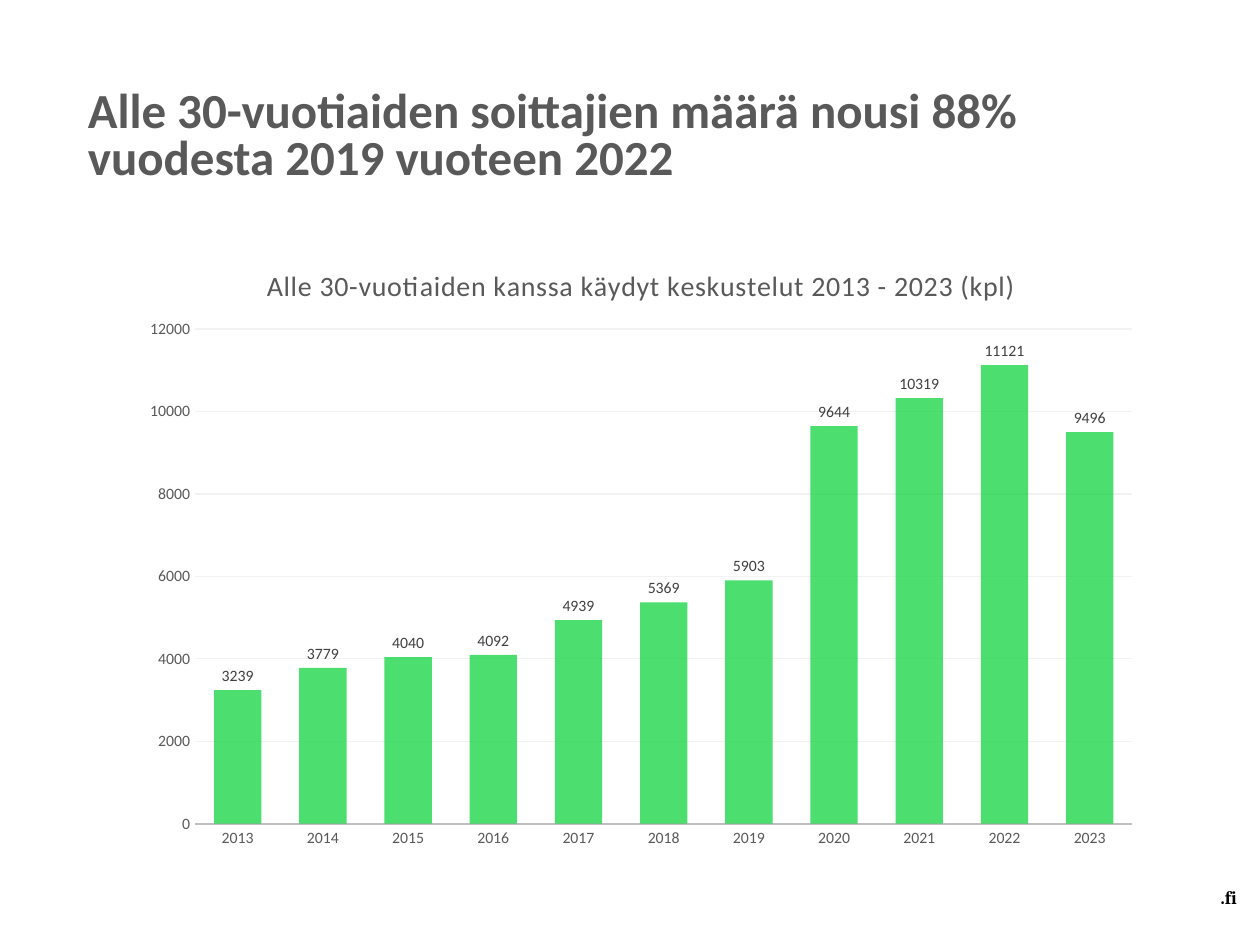
import pptx
import pptx.chart.data
import pptx.dml.color
import pptx.enum.chart
import pptx.enum.text
import pptx.oxml
import pptx.oxml.ns
import pptx.util
from pptx.util import Inches

RGBColor = pptx.dml.color.RGBColor
BLACK = RGBColor(0x00, 0x00, 0x00)
DARK_GREY = RGBColor(0x40, 0x40, 0x40)
GREY = RGBColor(0x59, 0x59, 0x59)
AXIS_GREY = RGBColor(0xBF, 0xBF, 0xBF)
GRID_GREY = RGBColor(0xF2, 0xF2, 0xF2)
GREEN = RGBColor(0x00, 0xD0, 0x32)

CONVERSATIONS = {
    "2013": 3239, "2014": 3779, "2015": 4040, "2016": 4092,
    "2017": 4939, "2018": 5369, "2019": 5903, "2020": 9644,
    "2021": 10319, "2022": 11121, "2023": 9496,
}


def add_child(parent, tag, **attributes):
    child = pptx.oxml.parse_xml(f"<{tag} {pptx.oxml.ns.nsdecls(tag[0])}/>")
    for name, value in attributes.items():
        child.set(name, str(value))
    parent.append(child)
    return child


def place(element, position, **fractions):
    """Give a chart part a manual layout, in fractions of the chart's size."""
    layout = element.find(pptx.oxml.ns.qn("c:layout"))
    if layout is None:
        layout = add_child(element, "c:layout")
        element.insert(position, layout)
    manual = add_child(layout, "c:manualLayout")
    if "w" in fractions:
        add_child(manual, "c:layoutTarget", val="inner")
    for axis in "xy":
        add_child(manual, f"c:{axis}Mode", val="edge")
    for name, value in fractions.items():
        add_child(manual, f"c:{name}", val=value)


class SlideBuilder:
    font_name = "Calibri"

    def __init__(self, slide):
        self.slide = slide

    def style(self, font, size, color, bold=False, name=None):
        font.name = name or self.font_name
        font.size = pptx.util.Pt(size)
        font.color.rgb = color
        font.bold = bold

    def text(self, text, box, size, color, name=None, spacing=None, wrap=True):
        shape = self.slide.shapes.add_textbox(*map(Inches, box))
        frame = shape.text_frame
        frame.word_wrap = wrap
        frame.vertical_anchor = pptx.enum.text.MSO_ANCHOR.TOP
        frame.text = text
        paragraph = frame.paragraphs[0]
        if spacing:
            paragraph.line_spacing = pptx.util.Pt(spacing)
        self.style(paragraph.runs[0].font, size, color, True, name)

    def column_chart(self, title, values, box):
        data = pptx.chart.data.CategoryChartData()
        data.categories = list(values)
        data.add_series("Series 1", list(values.values()))
        chart = self.slide.shapes.add_chart(
            pptx.enum.chart.XL_CHART_TYPE.COLUMN_CLUSTERED,
            *map(Inches, box), data).chart
        self.style(chart.font, 10, BLACK)
        chart.has_legend = False
        self.chart_title(chart, title)
        self.axes(chart)
        self.columns(chart.plots[0])
        plot_area = chart.element.find(".//" + pptx.oxml.ns.qn("c:plotArea"))
        place(plot_area, 0, x=0.065, y=0.148, w=0.915, h=0.795)

    def chart_title(self, chart, title):
        chart.has_title = True
        chart_title = chart.chart_title
        chart_title.include_in_layout = False
        chart_title.text_frame.text = title
        run = chart_title.text_frame.paragraphs[0].runs[0]
        self.style(run.font, 16, GREY)
        run.font._element.set("spc", "50")
        place(chart_title._element, 1, x=0.13, y=0.04)

    def axes(self, chart):
        for axis in (chart.category_axis, chart.value_axis):
            axis.major_tick_mark = pptx.enum.chart.XL_TICK_MARK.NONE
            axis.minor_tick_mark = pptx.enum.chart.XL_TICK_MARK.NONE
            self.style(axis.tick_labels.font, 9, GREY)
        category_line = chart.category_axis.format.line
        category_line.color.rgb = AXIS_GREY
        category_line.width = pptx.util.Pt(1.25)
        value_axis = chart.value_axis
        value_axis.minimum_scale = 0
        value_axis.maximum_scale = 12000
        value_axis.major_unit = 2000
        value_axis.format.line.fill.background()
        grid_line = value_axis.major_gridlines.format.line
        grid_line.color.rgb = GRID_GREY
        grid_line.width = pptx.util.Pt(0.75)

    def columns(self, plot):
        plot.vary_by_categories = False
        plot.gap_width = 80
        plot.overlap = 25
        series = plot.series[0]
        series.format.fill.solid()
        series.format.fill.fore_color.rgb = GREEN
        color = series._element.find(".//" + pptx.oxml.ns.qn("a:srgbClr"))
        add_child(color, "a:alpha", val=70000)
        labels = series.data_labels
        labels.show_value = True
        labels.position = pptx.enum.chart.XL_LABEL_POSITION.OUTSIDE_END
        self.style(labels.font, 9, DARK_GREY)


def main():
    presentation = pptx.Presentation()
    presentation.slide_width = Inches(10)
    presentation.slide_height = Inches(7.5)
    builder = SlideBuilder(
        presentation.slides.add_slide(presentation.slide_layouts[6]))
    builder.text(".fi", (9.59, 6.98, 0.34, 0.45), 10.5, BLACK,
                 name="Cambria", wrap=False)
    builder.column_chart(
        "Alle 30-vuotiaiden kanssa käydyt keskustelut 2013 - 2023 (kpl)",
        CONVERSATIONS, (1.02, 1.88, 8.13, 4.94))
    builder.text(
        "Alle 30-vuotiaiden soittajien määrä nousi 88% "
        "vuodesta 2019 vuoteen 2022",
        (0.6, 0.67, 7.63, 1.09), 28, GREY, spacing=27)
    presentation.save("out.pptx")


if __name__ == "__main__":
    main()
